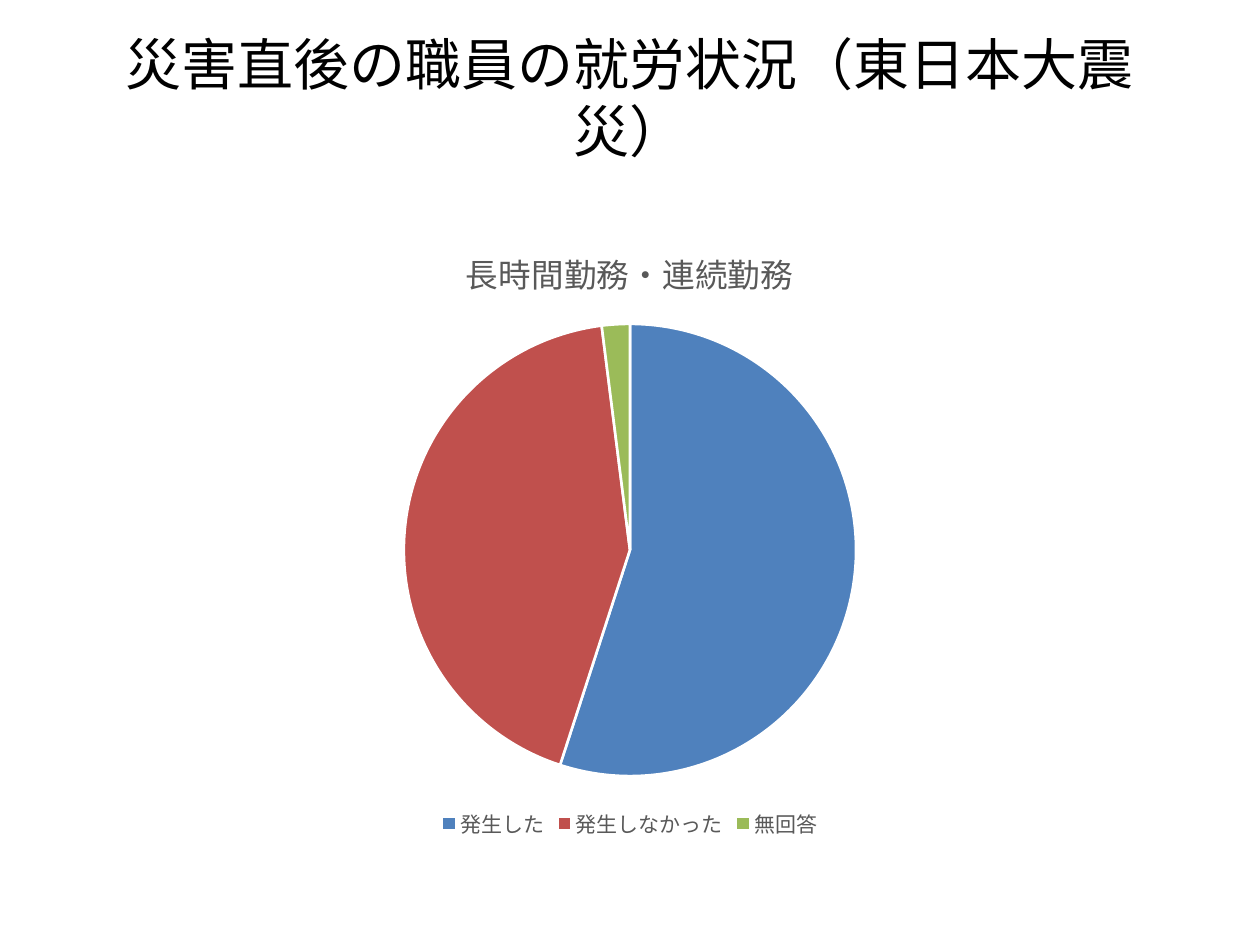
from typing import NamedTuple

from pptx import Presentation
from pptx.chart.data import CategoryChartData
from pptx.dml.color import RGBColor
from pptx.enum.chart import XL_CHART_TYPE, XL_LEGEND_POSITION
from pptx.enum.text import MSO_ANCHOR, PP_ALIGN
from pptx.util import Inches, Pt

PIE = XL_CHART_TYPE.PIE
BOTTOM = XL_LEGEND_POSITION.BOTTOM
MIDDLE = MSO_ANCHOR.MIDDLE
CENTER = PP_ALIGN.CENTER

FONT = "Calibri"
BLACK = RGBColor(0x00, 0x00, 0x00)
WHITE = RGBColor(0xFF, 0xFF, 0xFF)
GRAY = RGBColor(0x59, 0x59, 0x59)
BLUE = RGBColor(0x4F, 0x81, 0xBD)
RED = RGBColor(0xC0, 0x50, 0x4D)
GREEN = RGBColor(0x9B, 0xBB, 0x59)

SLIDE_TITLE = "災害直後の職員の就労状況（東日本大震災）"
CHART_TITLE = "長時間勤務・連続勤務"


class Answer(NamedTuple):
    label: str
    percent: int
    color: RGBColor


ANSWERS = [
    Answer("発生した", 55, BLUE),
    Answer("発生しなかった", 43, RED),
    Answer("無回答", 2, GREEN),
]


def style_font(font, size: float, color: RGBColor) -> None:
    font.name = FONT
    font.size = Pt(size)
    font.bold = False
    font.color.rgb = color


def add_title(slide, text: str) -> None:
    box = slide.shapes.add_textbox(Inches(0.5), Inches(0.3), Inches(9), Inches(0.93))
    text_frame = box.text_frame
    text_frame.word_wrap = True
    text_frame.vertical_anchor = MIDDLE
    text_frame.text = text
    paragraph = text_frame.paragraphs[0]
    paragraph.alignment = CENTER
    style_font(paragraph.runs[0].font, 32, BLACK)


def add_pie(slide, title: str, answers: list[Answer]) -> None:
    data = CategoryChartData()
    data.categories = [answer.label for answer in answers]
    data.add_series(title, [answer.percent for answer in answers])
    chart = slide.shapes.add_chart(
        PIE, Inches(0.5), Inches(1.75), Inches(9), Inches(4.95), data
    ).chart
    style_font(chart.font, 10, BLACK)

    # Chart title
    chart.has_title = True
    title_frame = chart.chart_title.text_frame
    title_frame.text = title
    style_font(title_frame.paragraphs[0].runs[0].font, 18.6, GRAY)
    chart.chart_title.include_in_layout = False

    # Legend
    chart.has_legend = True
    chart.legend.position = BOTTOM
    chart.legend.include_in_layout = False
    style_font(chart.legend.font, 12, GRAY)

    # Slices
    plot = chart.plots[0]
    plot.vary_by_categories = True
    for index, answer in enumerate(answers):
        slice_format = plot.series[0].points[index].format
        slice_format.fill.solid()
        slice_format.fill.fore_color.rgb = answer.color
        slice_format.line.color.rgb = WHITE
        slice_format.line.width = Pt(1.5)


def main() -> None:
    presentation = Presentation()
    presentation.slide_width = Inches(10)
    presentation.slide_height = Inches(7.5)
    slide = presentation.slides.add_slide(presentation.slide_layouts[6])
    add_title(slide, SLIDE_TITLE)
    add_pie(slide, CHART_TITLE, ANSWERS)
    presentation.save("out.pptx")


if __name__ == "__main__":
    main()
